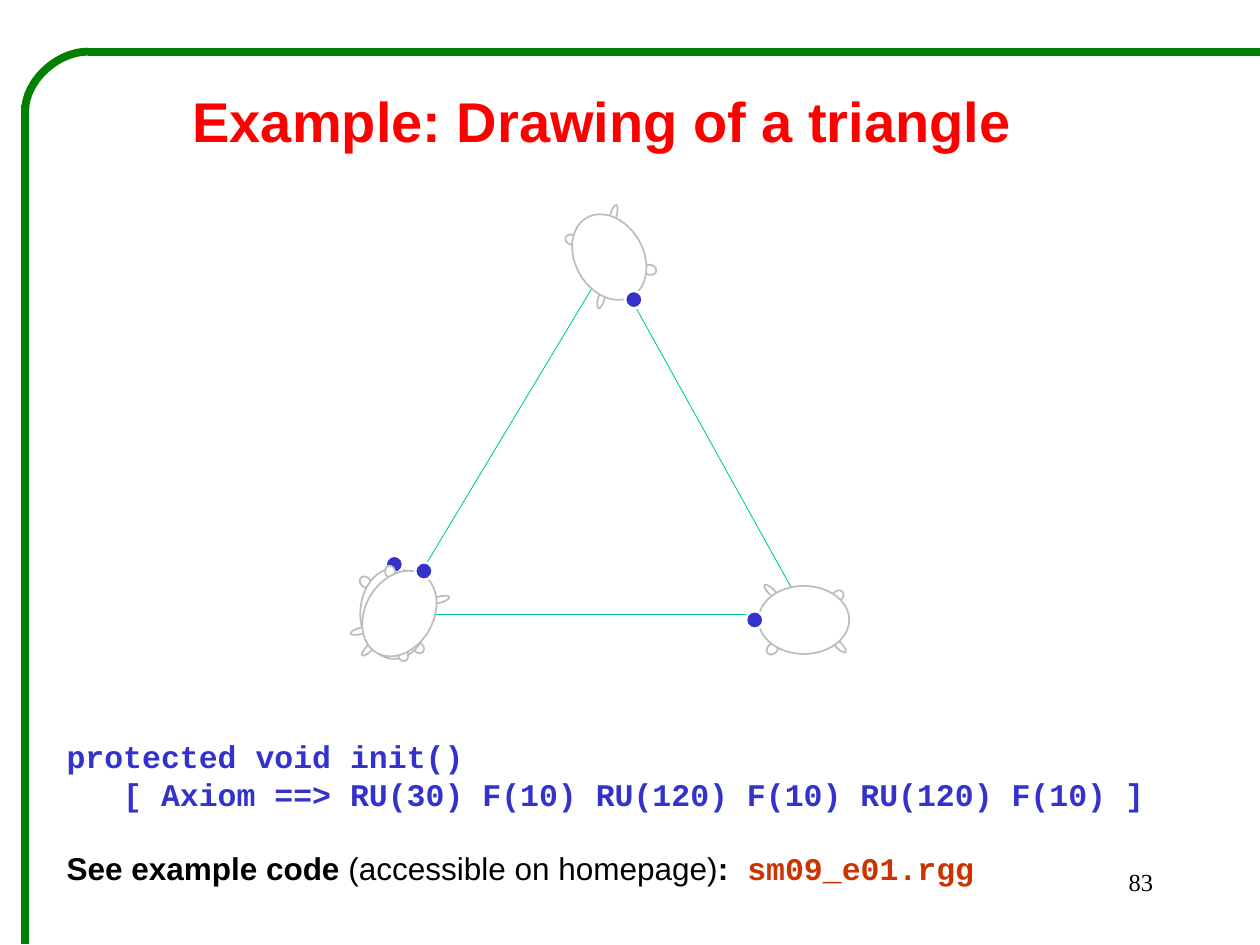
from math import cos, radians, sin

from lxml import etree
from pptx import Presentation
from pptx.dml.color import RGBColor
from pptx.enum.shapes import MSO_CONNECTOR, MSO_SHAPE
from pptx.enum.text import MSO_ANCHOR, PP_ALIGN
from pptx.oxml.ns import qn
from pptx.util import Inches, Pt

STRAIGHT, CURVE = MSO_CONNECTOR.STRAIGHT, MSO_CONNECTOR.CURVE
OVAL = MSO_SHAPE.OVAL
TOP, MIDDLE = MSO_ANCHOR.TOP, MSO_ANCHOR.MIDDLE
LEFT, CENTER, RIGHT = PP_ALIGN.LEFT, PP_ALIGN.CENTER, PP_ALIGN.RIGHT

RED = RGBColor(0xFF, 0x00, 0x00)
GREEN = RGBColor(0x00, 0x80, 0x00)
TEAL = RGBColor(0x00, 0xCC, 0x99)
BLUE = RGBColor(0x33, 0x33, 0xCC)
RUST = RGBColor(0xCC, 0x33, 0x00)
GREY = RGBColor(0xBD, 0xBD, 0xBD)
BLACK = RGBColor(0x00, 0x00, 0x00)
WHITE = RGBColor(0xFF, 0xFF, 0xFF)

SANS, MONO, SERIF = "Arial", "Courier New", "Times New Roman"
COLUMNS, ROWS = 100, 75
WIDTH, HEIGHT = Inches(10), Inches(7.5)

TURTLE_PARTS = [
    (1.9, 2.7, 1, 0.8, 45),
    (-2.3, -2.5, 1, 0.8, 45),
    (2.2, -2.55, 1.6, 0.5, 135),
    (-2, 2.75, 1.6, 0.5, 135),
    (0, 0, 5.4, 7.2, 0),
]
HEAD_DISTANCE, HEAD_SIZE = 3.9, 1.4


def across(columns):
    return round(columns * WIDTH / COLUMNS)


def down(rows):
    return round(rows * HEIGHT / ROWS)


def add_line(slide, start, end, color, weight, kind=STRAIGHT):
    connector = slide.shapes.add_connector(
        kind, across(start[0]), down(start[1]), across(end[0]), down(end[1]))
    connector.line.color.rgb = color
    connector.line.width = Pt(weight)
    etree.SubElement(connector._element.spPr, qn("a:effectLst"))
    return connector


def add_oval(slide, center, size, rotation, fill, line, weight):
    shape = slide.shapes.add_shape(
        OVAL, across(center[0] - size[0] / 2), down(center[1] - size[1] / 2),
        across(size[0]), down(size[1]))
    shape.rotation = rotation
    shape.shadow.inherit = False
    shape.fill.solid()
    shape.fill.fore_color.rgb = fill
    shape.line.color.rgb = line
    shape.line.width = Pt(weight)


def add_text(slide, box, paragraphs, size, align=LEFT, anchor=TOP):
    left, top, width, height = box
    shape = slide.shapes.add_textbox(across(left), down(top), across(width), down(height))
    text_frame = shape.text_frame
    text_frame.word_wrap = True
    text_frame.vertical_anchor = anchor
    text_frame.text = "\n".join([""] * len(paragraphs))
    for paragraph, runs in zip(text_frame.paragraphs, paragraphs):
        paragraph.alignment = align
        for text, font, color, bold in runs:
            run = paragraph.add_run()
            run.text = text
            run.font.name = font
            run.font.size = Pt(size)
            run.font.bold = bold
            run.font.color.rgb = color
    return text_frame.paragraphs


def draw_turtle(slide, center, heading):
    cosine, sine = cos(radians(heading)), sin(radians(heading))

    def turned(x, y):
        return center[0] + x * cosine - y * sine, center[1] + x * sine + y * cosine

    for x, y, width, height, angle in TURTLE_PARTS:
        add_oval(slide, turned(x, y), (width, height), (angle + heading) % 360,
                 WHITE, GREY, 1)
    add_oval(slide, turned(0, -HEAD_DISTANCE), (HEAD_SIZE, HEAD_SIZE), heading,
             BLUE, WHITE, 1.5)


def draw_triangle(slide, box):
    left, top, width, height = box
    start = (left, top + height)
    apex = (left + width * 0.52, top)
    corner = (left + width, top + height)
    for begin, end in ((corner, start), (apex, corner), (start, apex)):
        add_line(slide, begin, end, TEAL, 0.5)
    draw_turtle(slide, (start[0] - 0.1, start[1] - 0.1), 0)
    draw_turtle(slide, (start[0] + 0.3, start[1] - 0.1), 30)
    draw_turtle(slide, (apex[0], apex[1] - 0.2), 150)
    draw_turtle(slide, (corner[0] - 0.2, corner[1] + 0.4), 270)


def draw_frame(slide, box):
    left, top, width, height = box
    corner_width, corner_height = 5, 4.7
    add_line(slide, (left, top + corner_height - 0.5), (left, top + height), GREEN, 4.5)
    center_x, center_y = left + corner_width / 2, top + corner_height / 2
    curve = add_line(
        slide,
        (center_x - corner_height / 2, center_y - corner_width / 2),
        (center_x + corner_height / 2, center_y + corner_width / 2),
        GREEN, 4.5, CURVE)
    properties = curve._element.spPr
    properties.find(qn("a:prstGeom")).set("prst", "curvedConnector2")
    properties.find(qn("a:xfrm")).set("rot", str(270 * 60000))
    add_line(slide, (left + width, top), (left + corner_width, top), GREEN, 4.5)


def draw_title(slide, box):
    add_text(slide, box, [[("Example: Drawing of a triangle", SANS, RED, True)]],
             32, CENTER, MIDDLE)


def draw_code(slide, box):
    paragraphs = add_text(slide, box, [
        [("protected void init()", MONO, BLUE, True)],
        [("[ Axiom ==> RU(30) F(10) RU(120) F(10) RU(120) F(10) ]", MONO, BLUE, True)],
        [("See example code ", SANS, BLACK, True),
         ("(accessible on homepage)", SANS, BLACK, False),
         (":", SANS, BLACK, True),
         (" sm09_e01.rgg", MONO, RUST, True)],
    ], 18)
    indent = paragraphs[1]._p.get_or_add_pPr()
    indent.set("marL", str(across(4.5)))
    indent.set("indent", "0")
    paragraphs[2].space_before = Pt(21)


def draw_page_number(slide, box):
    add_text(slide, box, [[("83", SERIF, BLACK, False)]], 14, RIGHT)


def main():
    presentation = Presentation()
    presentation.slide_width, presentation.slide_height = WIDTH, HEIGHT
    slide = presentation.slides.add_slide(presentation.slide_layouts[6])
    draw_frame(slide, (2, 4.1, 98, 70.8))
    draw_title(slide, (13.8, 6, 68, 7.1))
    draw_triangle(slide, (31.4, 20.6, 32.6, 28.2))
    draw_code(slide, (4.3, 58, 91.4, 13))
    draw_page_number(slide, (71.7, 68.3, 20.8, 5))
    presentation.save("out.pptx")


if __name__ == "__main__":
    main()
